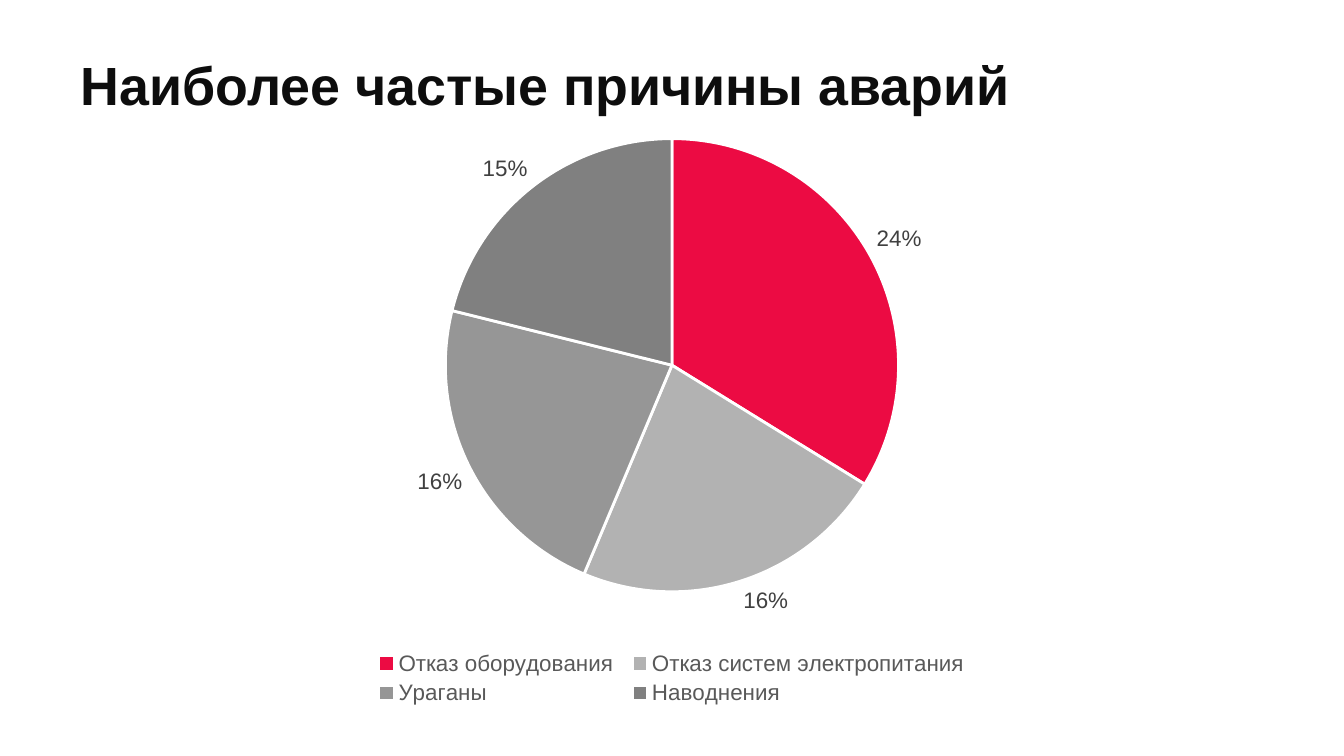
from lxml import etree
from pptx import Presentation
from pptx.chart.data import CategoryChartData as Data
from pptx.dml.color import RGBColor as RGB
from pptx.enum.chart import XL_CHART_TYPE as Kind
from pptx.enum.chart import XL_LABEL_POSITION as Spot
from pptx.enum.chart import XL_LEGEND_POSITION as Side
from pptx.enum.text import MSO_ANCHOR as Anchor, PP_ALIGN as Align
from pptx.oxml.ns import qn
from pptx.util import Pt

SCALE = 9525  # EMU in one px, 96 px to the inch
INK = RGB(0x0D, 0x0D, 0x0D)
DARK = RGB(0x40, 0x40, 0x40)
GREY = RGB(0x59, 0x59, 0x59)
WHITE = RGB(0xFF, 0xFF, 0xFF)
RED = RGB(0xEC, 0x0B, 0x43)
LIGHT = RGB(0xB2, 0xB2, 0xB2)
MID = RGB(0x96, 0x96, 0x96)
DEEP = RGB(0x80, 0x80, 0x80)

CAUSES = [
    ("Отказ оборудования", 0.24, RED),
    ("Отказ систем электропитания", 0.16, LIGHT),
    ("Ураганы", 0.16, MID),
    ("Наводнения", 0.15, DEEP),
]


def px(*sizes):
    return [size * SCALE for size in sizes]


def pin(part, index, inner, box):
    """Fix a chart part at a box given as fractions of the chart."""
    for old in part.findall(qn("c:layout")):
        part.remove(old)
    layout = etree.Element(qn("c:layout"))
    manual = etree.SubElement(layout, qn("c:manualLayout"))
    rules = [("xMode", "edge"), ("yMode", "edge"), *zip("xywh", box)]
    if inner:
        rules.insert(0, ("layoutTarget", "inner"))
    for name, val in rules:
        etree.SubElement(manual, qn("c:" + name)).set("val", str(val))
    part.insert(index, layout)


class Deck:
    face = "Arial"

    def __init__(self, wide, high):
        self.prs = Presentation()
        self.prs.slide_width, self.prs.slide_height = px(wide, high)
        self.slide = self.prs.slides.add_slide(self.prs.slide_layouts[5])

    def style(self, font, size, color, bold=False):
        font.name, font.size, font.bold = self.face, Pt(size), bold
        font.color.rgb = color

    def title(self, text, box):
        shape = self.slide.shapes.title
        shape.left, shape.top, shape.width, shape.height = px(*box)
        frame = shape.text_frame
        frame.text = text
        frame.vertical_anchor = Anchor.MIDDLE
        line = frame.paragraphs[0]
        line.alignment = Align.LEFT
        self.style(line.runs[0].font, 28.8, INK, True)

    def pie(self, rows, box):
        names, vals, colors = zip(*rows)
        data = Data(number_format="0%")
        data.categories = names
        data.add_series("Series 1", vals)
        frame = self.slide.shapes.add_chart(Kind.PIE, *px(*box), data)
        chart = frame.chart
        chart.has_title = False
        chart.font.name, chart.font.size = self.face, Pt(10)
        plot = chart.plots[0]
        plot.vary_by_categories = True
        for i, color in enumerate(colors):
            form = plot.series[0].points[i].format
            form.fill.solid()
            form.fill.fore_color.rgb = color
            form.line.color.rgb = WHITE
            form.line.width = Pt(1.5)
        tags = plot.series[0].data_labels
        tags.show_value, tags.show_percentage = True, False
        tags.number_format, tags.number_format_is_linked = "0%", False
        tags.position = Spot.OUTSIDE_END
        self.style(tags.font, 12, DARK)
        self.legend(chart)
        area = plot._element.getparent()
        pin(area, 0, True, (0.24, 0.04, 0.52, 0.76))

    def legend(self, chart):
        chart.has_legend = True
        key = chart.legend
        key.position = Side.BOTTOM
        key.include_in_layout = False
        self.style(key.font, 12, GREY)
        pin(key._element, 1, False, (0.16, 0.89, 0.68, 0.11))


def main():
    deck = Deck(960, 540)
    deck.title("Наиболее частые причины аварий", (48, 32, 716, 56))
    deck.pie(CAUSES, (160, 82, 640, 426))
    deck.prs.save("out.pptx")


if __name__ == "__main__":
    main()
